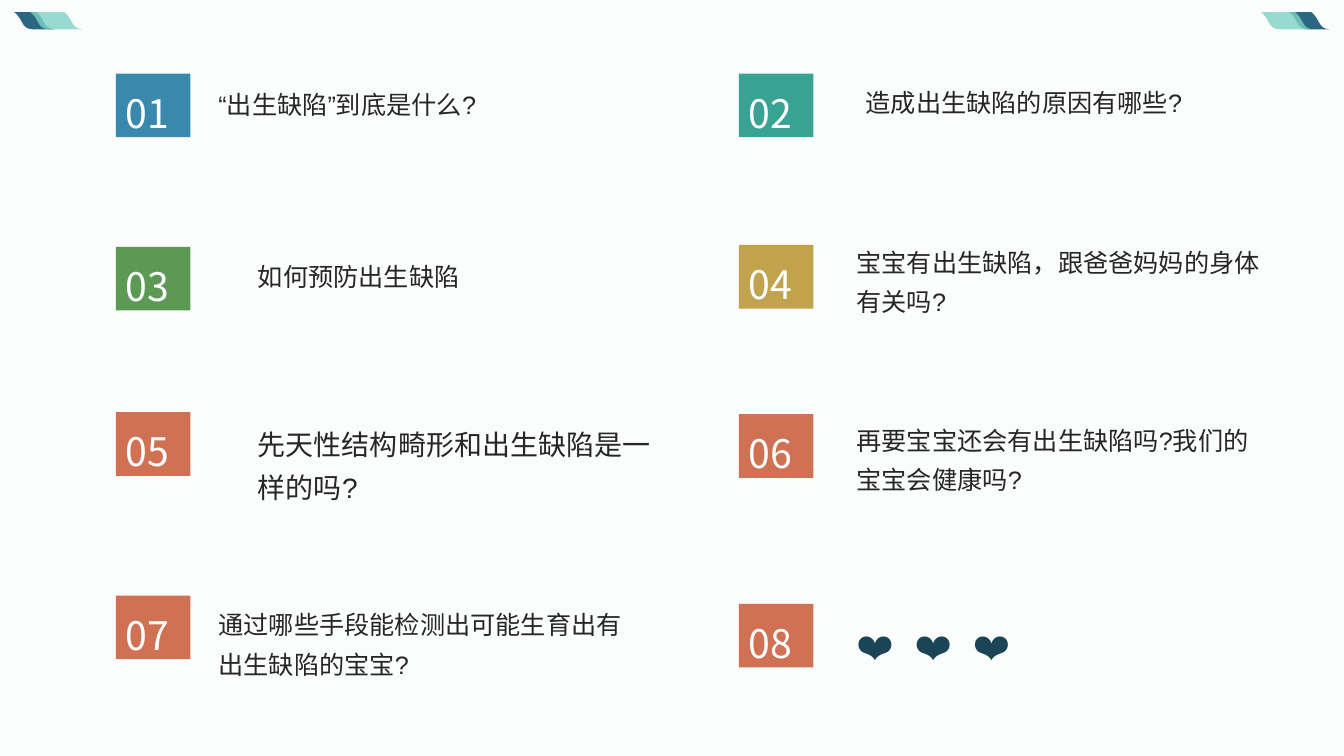
from dataclasses import dataclass

from lxml import etree
from pptx import Presentation
from pptx.dml.color import RGBColor
from pptx.enum.shapes import MSO_SHAPE
from pptx.enum.text import MSO_ANCHOR, PP_ALIGN
from pptx.oxml.ns import qn
from pptx.shapes.autoshape import Shape
from pptx.slide import Slide
from pptx.text.text import TextFrame
from pptx.util import Pt

RECTANGLE = MSO_SHAPE.RECTANGLE
TOP, MIDDLE = MSO_ANCHOR.TOP, MSO_ANCHOR.MIDDLE
LEFT, JUSTIFY = PP_ALIGN.LEFT, PP_ALIGN.JUSTIFY

NUMBER_FONT, QUESTION_FONT = "Noto Sans CJK SC", "Arial"
WHITE, INK, HEART = "FFFFFF", "262626", "1C4457"
BLUE, TEAL, GREEN, GOLD, CORAL = "3989AD", "38A293", "5B9955", "C1A24D", "D07154"
DARK_RIBBON, LIGHT_RIBBON = "2B6782", "7DD2C6"

COLUMNS = (82.8, 527.8)
BADGE_WIDTH, ROW_HEIGHT, QUESTION_WIDTH = 53.3, 45.4, 309.6
RIBBON_TOP = 8.6
EDGE_WIDTH = 13.4
EDGE_CURVES = (
    ((0, 0), (0, 0), (2.7, 1.8), (5, 6.2)),
    ((5, 6.2), (7.2, 10.4), (8.6, 12), (EDGE_WIDTH, 12.4)),
)
CURVE_STEPS = 8


@dataclass(frozen=True)
class Topic:
    text: str
    color: str
    badge_top: float
    text_left: float
    text_top: float
    text_height: float = ROW_HEIGHT
    size: float = 18
    ink: str = INK


@dataclass(frozen=True)
class Ribbon:
    left: float
    width: float
    color: str
    opacity: int = 100


TOPICS = (
    Topic("“出生缺陷”到底是什么?", BLUE, 52.6, 149, 54),
    Topic("造成出生缺陷的原因有哪些?", TEAL, 52.6, 611.3, 52.6),
    Topic("如何预防出生缺陷", GREEN, 176.4, 177.1, 176.4),
    Topic("宝宝有出生缺陷，跟爸爸妈妈的身体有关吗?", GOLD, 175, 604.8, 166.3, 56.2),
    Topic("先天性结构畸形和出生缺陷是一样的吗?", CORAL, 294.5, 177.1, 294.5, 74.9, 20),
    Topic("再要宝宝还会有出生缺陷吗?我们的宝宝会健康吗?", CORAL, 295.9, 604.8, 293.8),
    Topic("通过哪些手段能检测出可能生育出有出生缺陷的宝宝?", CORAL, 425.5, 149, 425.5),
    Topic("❤  ❤  ❤", CORAL, 431.3, 604.8, 431.3, size=28, ink=HEART),
)

RIBBONS = (
    Ribbon(10.1, 29, DARK_RIBBON),
    Ribbon(21.6, 37.6, LIGHT_RIBBON, 80),
    Ribbon(920.9, 29, DARK_RIBBON),
    Ribbon(900.7, 37.6, LIGHT_RIBBON, 80),
)


def rgb(color: str) -> RGBColor:
    return RGBColor.from_string(color)


def paint(shape: Shape, color: str) -> None:
    """Give the shape a flat fill, without line or shadow."""
    shape.shadow.inherit = False
    shape.fill.solid()
    shape.fill.fore_color.rgb = rgb(color)
    shape.line.fill.background()


def write(frame: TextFrame, text: str, font_name: str, size: float, color: str,
          align: PP_ALIGN, anchor: MSO_ANCHOR) -> None:
    frame.word_wrap = True
    frame.vertical_anchor = anchor
    paragraph = frame.paragraphs[0]
    paragraph.text = text
    paragraph.alignment = align
    paragraph.line_spacing = 1.3
    font = paragraph.font
    font.name = font_name
    font.size = Pt(size)
    font.color.rgb = rgb(color)
    properties = paragraph._p.pPr.find(qn("a:defRPr"))
    etree.SubElement(properties, qn("a:ea")).set("typeface", font_name)


def edge_points() -> list[tuple[float, float]]:
    """Sample the slanted S-curve that ends every ribbon."""
    points = [EDGE_CURVES[0][0]]
    for start, first, second, end in EDGE_CURVES:
        for step in range(1, CURVE_STEPS + 1):
            t = step / CURVE_STEPS
            u = 1 - t
            weights = (u**3, 3 * u * u * t, 3 * u * t * t, t**3)
            controls = (start, first, second, end)
            x, y = (sum(w * c[axis] for w, c in zip(weights, controls)) for axis in (0, 1))
            points.append((x, y))
    return points


def draw_ribbon(slide: Slide, ribbon: Ribbon) -> None:
    left_edge = edge_points()
    shift = ribbon.width - EDGE_WIDTH
    right_edge = [(x + shift, y) for x, y in reversed(left_edge)]
    outline = [(Pt(ribbon.left + x), Pt(RIBBON_TOP + y)) for x, y in left_edge + right_edge]
    builder = slide.shapes.build_freeform(*outline[0])
    builder.add_line_segments(outline[1:], close=True)
    shape = builder.convert_to_shape()
    paint(shape, ribbon.color)
    if ribbon.opacity < 100:
        fill_color = shape._element.spPr.find(qn("a:solidFill"))[0]
        etree.SubElement(fill_color, qn("a:alpha")).set("val", str(ribbon.opacity * 1000))


def draw_topic(slide: Slide, index: int, topic: Topic) -> None:
    badge = slide.shapes.add_shape(
        RECTANGLE, Pt(COLUMNS[index % 2]), Pt(topic.badge_top), Pt(BADGE_WIDTH), Pt(ROW_HEIGHT))
    paint(badge, topic.color)
    write(badge.text_frame, f"{index + 1:02}", NUMBER_FONT, 28, WHITE, JUSTIFY, MIDDLE)
    question = slide.shapes.add_textbox(
        Pt(topic.text_left), Pt(topic.text_top), Pt(QUESTION_WIDTH), Pt(topic.text_height))
    write(question.text_frame, topic.text, QUESTION_FONT, topic.size, topic.ink, LEFT, TOP)


def main() -> None:
    presentation = Presentation()
    presentation.slide_width, presentation.slide_height = Pt(960), Pt(540)
    slide = presentation.slides.add_slide(presentation.slide_layouts[6])
    slide.background.fill.solid()
    slide.background.fill.fore_color.rgb = rgb("FBFCFC")
    for ribbon in RIBBONS:
        draw_ribbon(slide, ribbon)
    for index, topic in enumerate(TOPICS):
        draw_topic(slide, index, topic)
    presentation.save("out.pptx")


if __name__ == "__main__":
    main()
